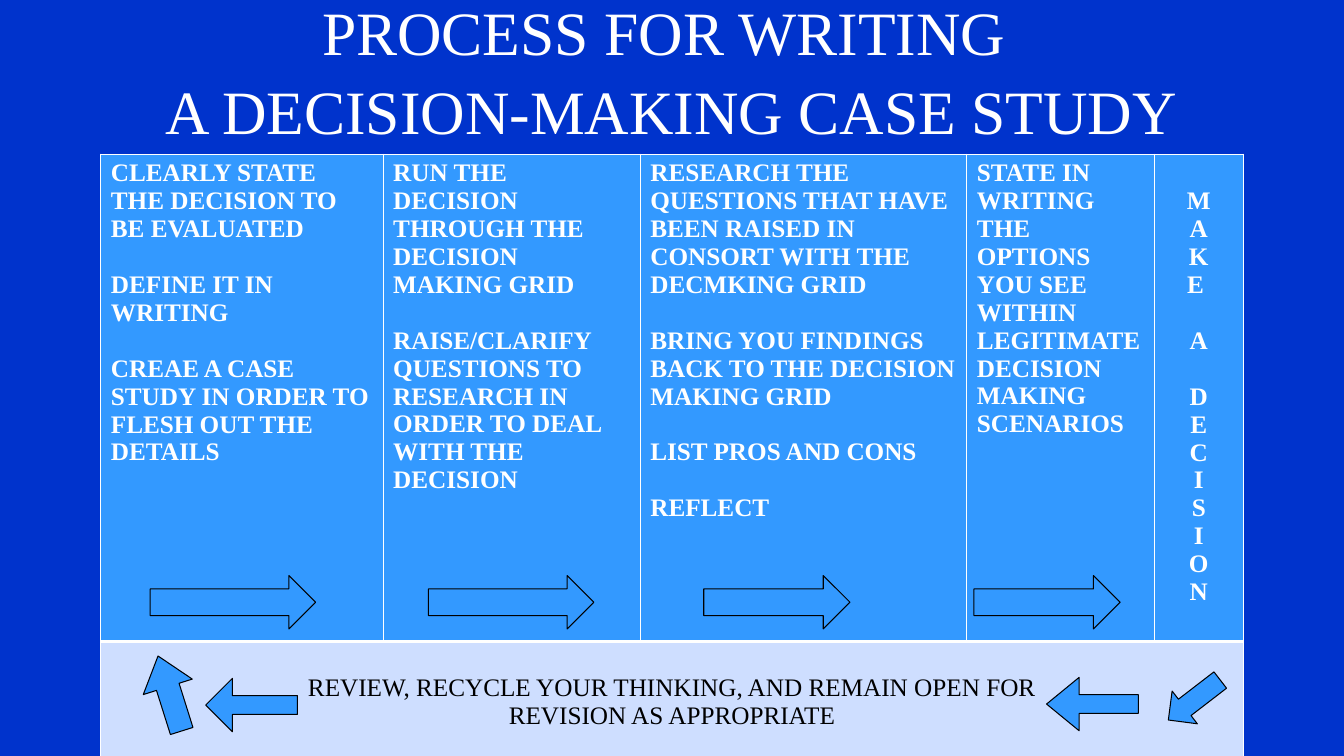
"""Build the slide on the process for writing a decision-making case study."""
import pptx
import pptx.dml.color
import pptx.enum.shapes
import pptx.enum.text
import pptx.oxml.ns
import pptx.util
from lxml import etree

Inches = pptx.util.Inches
Pt = pptx.util.Pt
PRESETS = pptx.enum.shapes.MSO_SHAPE
CENTER = pptx.enum.text.PP_ALIGN.CENTER
LEFT = pptx.enum.text.PP_ALIGN.LEFT

COLORS = {"ground": "0033CC", "step": "3399FF", "review": "CEDEFF",
          "light": "FFFFFF", "dark": "000000"}
TITLE = "PROCESS FOR WRITING \vA DECISION-MAKING CASE STUDY"
STEPS = [
    (2.8, ["CLEARLY STATE THE DECISION TO BE EVALUATED",
           "DEFINE IT IN WRITING",
           "CREAE A CASE STUDY IN ORDER TO FLESH OUT THE DETAILS"]),
    (2.55, ["RUN THE DECISION THROUGH THE DECISION MAKING GRID",
            "RAISE/CLARIFY QUESTIONS TO RESEARCH IN ORDER TO DEAL WITH THE DECISION"]),
    (3.24, ["RESEARCH THE QUESTIONS THAT HAVE BEEN RAISED IN CONSORT WITH THE DECMKING GRID",
            "BRING YOU FINDINGS BACK TO THE DECISION MAKING GRID",
            "LIST PROS AND CONS",
            "REFLECT"]),
    (1.86, ["STATE IN WRITING THE OPTIONS YOU SEE WITHIN LEGITIMATE DECISION MAKING SCENARIOS"]),
]
OUTCOME_WIDTH = 0.88
OUTCOME = [["M", "A", "K", "E "], ["A"], list("DECISION")]
REVIEW = [["REVIEW, RECYCLE YOUR THINKING, AND REMAIN OPEN FOR",
           "REVISION AS APPROPRIATE"]]
ROW_HEIGHTS = [4.61, 1.41]
FORWARD_ARROWS = [(1.49, 1.64), (4.25, 1.64), (6.98, 1.45), (9.66, 1.45)]
RETURN_ARROWS = [
    (PRESETS.DOWN_ARROW, (11.64, 6.62, 0.41, 0.65), 52.4, ()),
    (PRESETS.LEFT_ARROW, (10.38, 6.72, 0.91, 0.53), 0, (0.35, 0.61)),
    (PRESETS.LEFT_ARROW, (2.04, 6.73, 0.91, 0.53), 0, (0.35, 0.5)),
    (PRESETS.UP_ARROW, (1.43, 6.49, 0.51, 0.78), 342.5, (0.46, 0.63)),
]
LINE_GAP = 20


def rgb(name):
    return pptx.dml.color.RGBColor.from_string(COLORS[name])


def paint(fill, name):
    fill.solid()
    fill.fore_color.rgb = rgb(name)


def apply(target, values):
    for key, value in values.items():
        setattr(target, key, value)


def write(paragraph, text, color, size, bold, layout):
    paragraph.text = text
    apply(paragraph, layout)
    for run in paragraph.runs:
        apply(run.font, {"name": "Times New Roman", "size": Pt(size), "bold": bold})
        run.font.color.rgb = rgb(color)


def add_borders(cell, widths):
    properties = cell._tc.get_or_add_tcPr()
    for position, (side, width) in enumerate(widths.items()):
        border = etree.Element(pptx.oxml.ns.qn(f"a:ln{side}"), w=str(Pt(width)))
        solid = etree.SubElement(border, pptx.oxml.ns.qn("a:solidFill"))
        etree.SubElement(solid, pptx.oxml.ns.qn("a:srgbClr"), val=COLORS["light"])
        properties.insert(position, border)


def fill_cell(cell, groups, fill, color, bold, align, top_lines, widths):
    paint(cell.fill, fill)
    cell.margin_top = Inches(0.05) + Pt(LINE_GAP * top_lines)
    frame = cell.text_frame
    for group_index, group in enumerate(groups):
        for line_index, line in enumerate(group):
            first = group_index == line_index == 0
            paragraph = frame.paragraphs[0] if first else frame.add_paragraph()
            gap = LINE_GAP if group_index and not line_index else 0
            write(paragraph, line, color, 18, bold,
                  {"alignment": align, "space_before": Pt(gap)})
    add_borders(cell, widths)


def add_title(slide):
    box = slide.shapes.add_textbox(Inches(1), 0, Inches(11.33), Inches(1.34))
    apply(box.text_frame, {"word_wrap": True,
                           "vertical_anchor": pptx.enum.text.MSO_ANCHOR.MIDDLE})
    write(box.text_frame.paragraphs[0], TITLE, "light", 44, False,
          {"alignment": CENTER, "line_spacing": 1.07})


def add_process(slide):
    widths = [width for width, _ in STEPS] + [OUTCOME_WIDTH]
    table = slide.shapes.add_table(
        len(ROW_HEIGHTS), len(widths), Inches(1), Inches(1.53),
        Inches(sum(widths)), Inches(sum(ROW_HEIGHTS))).table
    apply(table, {"first_row": False, "horz_banding": False})
    for column, width in zip(table.columns, widths):
        column.width = Inches(width)
    for row, height in zip(table.rows, ROW_HEIGHTS):
        row.height = Inches(height)
    step_borders = {"L": 1, "R": 1, "T": 1, "B": 3}
    for column, (_, points) in enumerate(STEPS):
        fill_cell(table.cell(0, column), [[point] for point in points],
                  "step", "light", True, LEFT, 0, step_borders)
    fill_cell(table.cell(0, len(STEPS)), OUTCOME,
              "step", "light", True, CENTER, 1, step_borders)
    review = table.cell(1, 0)
    review.merge(table.cell(1, len(STEPS)))
    fill_cell(review, REVIEW, "review", "dark", False, CENTER, 1,
              {"L": 1, "R": 1, "T": 3, "B": 1})


def add_arrow(slide, preset, place, rotation, adjustments):
    arrow = slide.shapes.add_shape(preset, *map(Inches, place))
    arrow.rotation = rotation
    arrow.shadow.inherit = False
    for index, value in enumerate(adjustments):
        arrow.adjustments[index] = value
    paint(arrow.fill, "step")
    paint(arrow.line.fill, "dark")
    arrow.line.width = Pt(0.75)


def main():
    deck = pptx.Presentation()
    apply(deck, {"slide_width": Inches(13.33), "slide_height": Inches(7.5)})
    slide = deck.slides.add_slide(deck.slide_layouts[6])
    paint(slide.background.fill, "ground")
    add_title(slide)
    add_process(slide)
    for left, width in FORWARD_ARROWS:
        add_arrow(slide, PRESETS.RIGHT_ARROW, (left, 5.71, width, 0.53), 0, ())
    for arrow in RETURN_ARROWS:
        add_arrow(slide, *arrow)
    deck.save("out.pptx")


if __name__ == "__main__":
    main()
